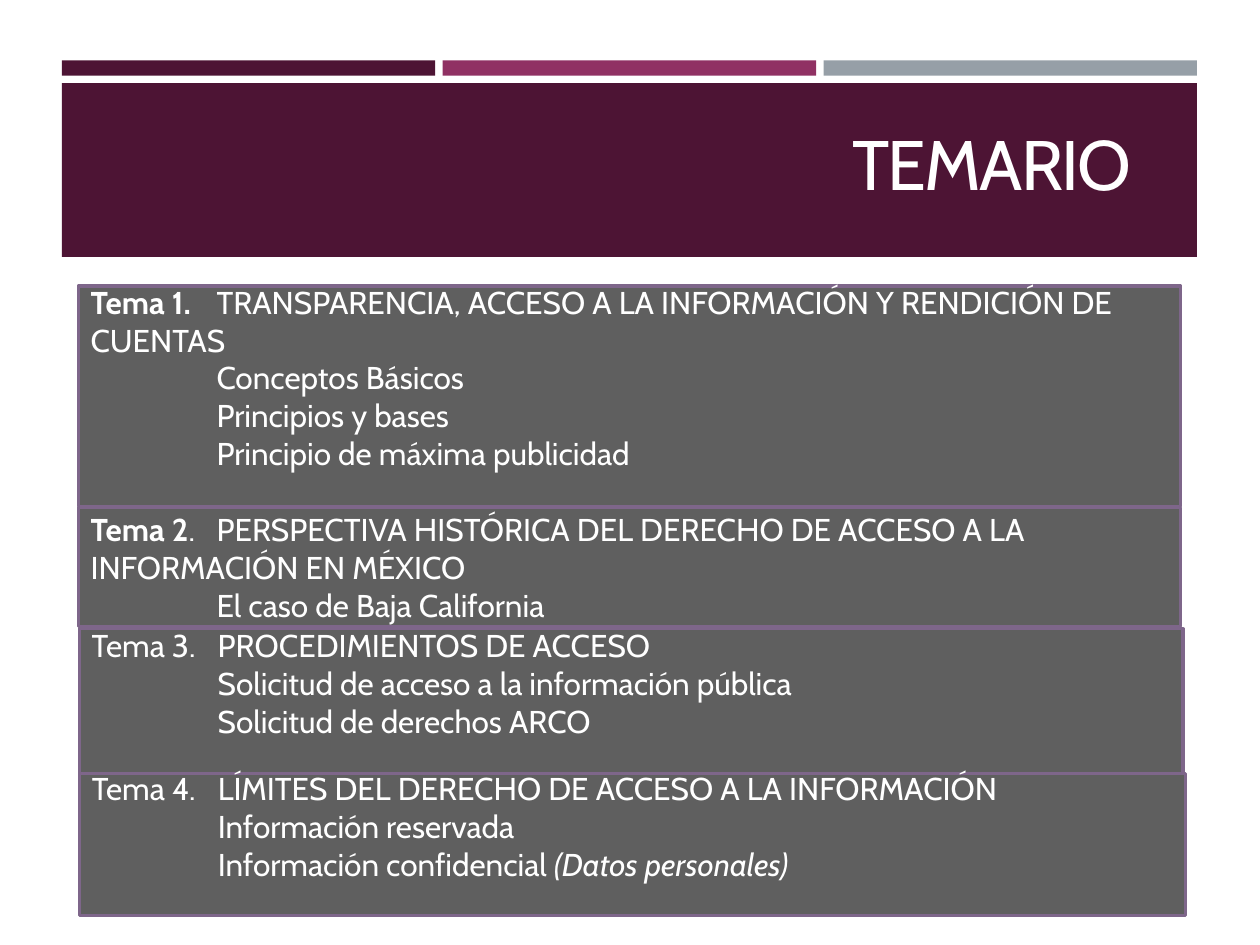
from lxml.etree import SubElement
from pptx import Presentation
from pptx.dml.color import RGBColor
from pptx.enum.shapes import MSO_SHAPE
from pptx.enum.text import MSO_ANCHOR, MSO_AUTO_SIZE, PP_ALIGN
from pptx.oxml.ns import qn
from pptx.util import Inches, Pt

THEME = {
    "font": "Cabin", "title_size": 40, "body_size": 18,
    "plum": "4D1434", "magenta": "903163", "silver": "969FA7",
    "panel": "5F5F5F", "outline": "7E668A", "text": "FFFFFF",
}

TITLE = "TEMARIO"
STRIPES = ["plum", "magenta", "silver"]

# Spans are (text, style); style is "", "b" or "i".
TOPICS = [
    {"box": (0.62, 2.27, 8.75, 1.75), "tab": 0.91, "spare": 0.3,
     "label": [("Tema 1.", "b")],
     "heading": "TRANSPARENCIA, ACCESO A LA INFORMACIÓN Y RENDICIÓN DE CUENTAS",
     "items": [[("Conceptos Básicos", "")], [("Principios y bases", "")],
               [("Principio de máxima publicidad", "")]]},
    {"box": (0.62, 4.03, 8.75, 0.94), "tab": 0.94, "spare": 0,
     "label": [("Tema 2", "b"), (".", "")],
     "heading": "PERSPECTIVA HISTÓRICA DEL DERECHO DE ACCESO A LA INFORMACIÓN EN MÉXICO",
     "items": [[("El caso de Baja California", "")]]},
    {"box": (0.63, 4.99, 8.76, 1.16), "tab": 1.05, "spare": 0.3,
     "label": [("Tema 3.", "")],
     "heading": "PROCEDIMIENTOS DE ACCESO",
     "items": [[("Solicitud de acceso a la información pública", "")],
               [("Solicitud de derechos ARCO", "")]]},
    {"box": (0.63, 6.14, 8.78, 1.13), "tab": 1, "spare": 0.3,
     "label": [("Tema 4.", "")],
     "heading": "LÍMITES DEL DERECHO DE ACCESO A LA INFORMACIÓN",
     "items": [[("Información reservada", "")],
               [("Información confidencial ", ""), ("(Datos personales)", "i")]]},
]
ITEM_INDENT = 1
BAND_LEFT, BAND_WIDTH, STRIPE_GAP = 0.49, 9.01, 0.06


def color(name):
    return RGBColor.from_string(THEME[name])


def add_rectangle(slide, box, fill, outline=None):
    shape = slide.shapes.add_shape(MSO_SHAPE.RECTANGLE, *map(Inches, box))
    shape.shadow.inherit = False
    shape.fill.solid()
    shape.fill.fore_color.rgb = color(fill)
    if outline:
        shape.line.color.rgb = color(outline)
        shape.line.width = Pt(1.75)
    else:
        shape.line.fill.background()
    return shape


def add_span(para, text, size="body_size", style=""):
    span = para.add_run()
    span.text = text
    span.font.name = THEME["font"]
    span.font.size = Pt(THEME[size])
    span.font.color.rgb = color("text")
    span.font.bold = style == "b"
    span.font.italic = style == "i"
    return span


def fill_paragraph(para, spans, indent=0, tab=None):
    para.alignment = PP_ALIGN.LEFT
    properties = para._p.get_or_add_pPr()
    properties.set("marL", str(Inches(indent)))
    properties.set("indent", "0")
    if tab:
        tabs = SubElement(properties, qn("a:tabLst"))
        SubElement(tabs, qn("a:tab"), pos=str(Inches(tab)), algn="l")
    for text, style in spans:
        add_span(para, text, style=style)


def add_topic(slide, topic):
    frame = add_rectangle(slide, topic["box"], "panel", "outline").text_frame
    frame.word_wrap = True
    frame.vertical_anchor = MSO_ANCHOR.MIDDLE
    frame.margin_bottom = Inches(0.05 + topic["spare"])
    heading = topic["label"] + [("\t" + topic["heading"], "")]
    fill_paragraph(frame.paragraphs[0], heading, tab=topic["tab"])
    for item in topic["items"]:
        fill_paragraph(frame.add_paragraph(), item, indent=ITEM_INDENT)


def add_header(slide):
    width = (BAND_WIDTH - STRIPE_GAP * (len(STRIPES) - 1)) / len(STRIPES)
    for index, fill in enumerate(STRIPES):
        left = BAND_LEFT + index * (width + STRIPE_GAP)
        add_rectangle(slide, (left, 0.48, width, 0.12), fill)
    add_rectangle(slide, (BAND_LEFT, 0.66, BAND_WIDTH, 1.38), "plum")

    title = slide.shapes.title
    slide.shapes._spTree.append(title._element)  # in front of the band
    title.left, title.top, title.width, title.height = map(
        Inches, (5.55, 0.86, 3.67, 0.86))
    frame = title.text_frame
    frame.auto_size = MSO_AUTO_SIZE.NONE
    frame.vertical_anchor = MSO_ANCHOR.MIDDLE
    frame.margin_right = Inches(0.24)
    para = frame.paragraphs[0]
    para.alignment = PP_ALIGN.RIGHT
    span = add_span(para, TITLE, "title_size")
    span._r.get_or_add_rPr().set("spc", "-100")


def main():
    deck = Presentation()
    deck.slide_width, deck.slide_height = Inches(10), Inches(7.5)
    slide = deck.slides.add_slide(deck.slide_layouts[5])
    add_header(slide)
    for topic in TOPICS:
        add_topic(slide, topic)
    deck.save("out.pptx")


if __name__ == "__main__":
    main()
